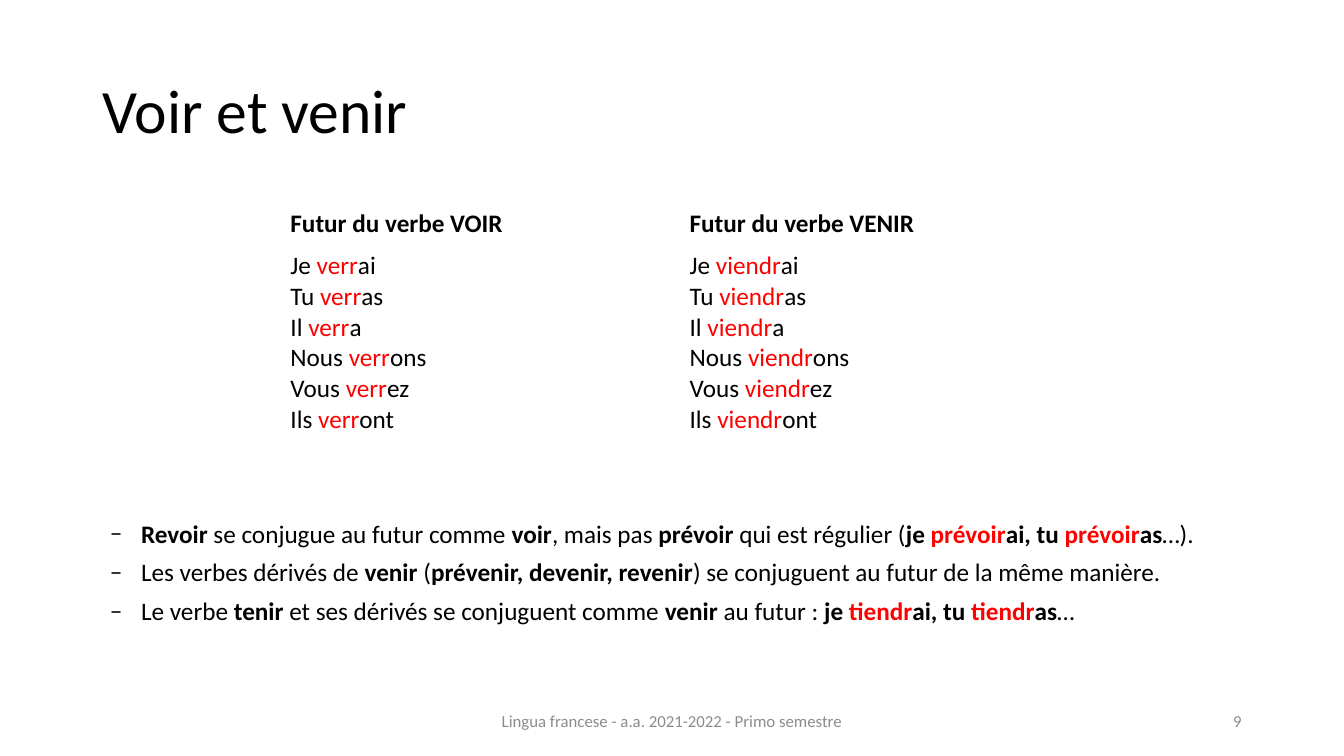
"""Build the slide on the French future tense of voir and venir."""
from dataclasses import dataclass

from lxml.etree import SubElement
from pptx import Presentation
from pptx.dml.color import RGBColor
from pptx.enum.text import MSO_ANCHOR, PP_ALIGN
from pptx.oxml.ns import qn
from pptx.util import Emu, Inches, Pt

WIDTH, HEIGHT = Inches(13.33), Inches(7.5)


@dataclass(frozen=True)
class Theme:
    font: str = "Calibri"
    ink: RGBColor = RGBColor(0, 0, 0)
    stem: RGBColor = RGBColor(255, 0, 0)
    muted: RGBColor = RGBColor(0x8C, 0x8C, 0x8C)
    paper: RGBColor = RGBColor(255, 255, 255)
    title: int = 44
    body: int = 18
    footer: int = 12


@dataclass(frozen=True)
class Box:
    """Place given as percentages of the slide's size."""
    left: float
    top: float
    width: float
    height: float

    def emu(self) -> tuple[Emu, ...]:
        return (Emu(round(WIDTH * self.left / 100)), Emu(round(HEIGHT * self.top / 100)),
                Emu(round(WIDTH * self.width / 100)), Emu(round(HEIGHT * self.height / 100)))


@dataclass(frozen=True)
class Label:
    text: str
    box: Box
    size: int
    color: RGBColor
    align: PP_ALIGN = PP_ALIGN.LEFT
    spacing: float = 1.0


@dataclass(frozen=True)
class Verb:
    name: str
    stem: str


THEME = Theme()
LABELS = (
    Label("Voir et venir", Box(6.88, 5.33, 86.25, 19.33), THEME.title, THEME.ink, spacing=0.9),
    Label("Lingua francese - a.a. 2021-2022 - Primo semestre",
          Box(33.13, 92.67, 33.75, 5.33), THEME.footer, THEME.muted, PP_ALIGN.CENTER),
    Label("9", Box(70.63, 92.67, 22.5, 5.33), THEME.footer, THEME.muted, PP_ALIGN.RIGHT),
)
TABLE_BOX = Box(20.86, 26.93, 59.41, 30.8)
HEADER_SHARE = 0.18
NOTES_BOX = Box(7.43, 67.87, 86.25, 15.73)
VERBS = (Verb("VOIR", "verr"), Verb("VENIR", "viendr"))
ENDINGS = {"Je": "ai", "Tu": "as", "Il": "a", "Nous": "ons", "Vous": "ez", "Ils": "ont"}
NOTES = (
    "*Revoir* se conjugue au futur comme *voir*, mais pas *prévoir* qui est régulier "
    "(*je |prévoir|ai, tu |prévoir|as*…).",
    "Les verbes dérivés de *venir* (*prévenir, devenir, revenir*) "
    "se conjuguent au futur de la même manière.",
    "Le verbe *tenir* et ses dérivés se conjuguent comme *venir *au futur : "
    "*je |tiendr|ai, tu |tiendr|as*…",
)


def write(tf, text: str, *, size: int = THEME.body, color: RGBColor = THEME.ink,
          align: PP_ALIGN = PP_ALIGN.LEFT, spacing: float = 1.0, after: int = 0,
          bullet: str = "") -> None:
    """Write one paragraph per line; asterisks mark bold and bars mark a verb stem."""
    for n, line in enumerate(text.split("\n")):
        p = tf.add_paragraph() if n else tf.paragraphs[0]
        p.alignment, p.line_spacing, p.space_after = align, spacing, Pt(after)
        if bullet:
            pPr = p._p.get_or_add_pPr()
            pPr.set("marL", str(Inches(0.31)))
            pPr.set("indent", str(-Inches(0.31)))
            SubElement(pPr, qn("a:buFont"), typeface=THEME.font)
            SubElement(pPr, qn("a:buChar"), char=bullet)
        for i, phrase in enumerate(line.split("*")):
            for j, part in enumerate(phrase.split("|")):
                if part:
                    r = p.add_run()
                    r.text = part
                    r.font.name, r.font.size = THEME.font, Pt(size)
                    r.font.bold = i % 2 == 1
                    r.font.color.rgb = THEME.stem if j % 2 else color


def add_text(s, box: Box, text: str, anchor: MSO_ANCHOR, **fmt) -> None:
    """Add a wrapping text box."""
    tf = s.shapes.add_textbox(*box.emu()).text_frame
    tf.word_wrap, tf.vertical_anchor = True, anchor
    write(tf, text, **fmt)


def add_conjugations(s, box: Box, verbs: tuple[Verb, ...]) -> None:
    """Add the table with one column for each verb."""
    table = s.shapes.add_table(2, len(verbs), *box.emu()).table
    height = box.emu()[3]
    table.rows[0].height = Emu(round(height * HEADER_SHARE))
    table.rows[1].height = height - table.rows[0].height
    for col, verb in enumerate(verbs):
        forms = "\n".join(f"{who} |{verb.stem}|{end}" for who, end in ENDINGS.items())
        for row, text in enumerate((f"*Futur du verbe {verb.name}*", forms)):
            cell = table.cell(row, col)
            cell.fill.solid()
            cell.fill.fore_color.rgb = THEME.paper
            write(cell.text_frame, text)


def main() -> None:
    """Build and save the slide."""
    prs = Presentation()
    prs.slide_width, prs.slide_height = WIDTH, HEIGHT
    s = prs.slides.add_slide(prs.slide_layouts[6])
    for label in LABELS:
        add_text(s, label.box, label.text, MSO_ANCHOR.MIDDLE, size=label.size,
                 color=label.color, align=label.align, spacing=label.spacing)
    add_conjugations(s, TABLE_BOX, VERBS)
    add_text(s, NOTES_BOX, "\n".join(NOTES), MSO_ANCHOR.TOP, after=6, bullet="–")
    prs.save("out.pptx")


if __name__ == "__main__":
    main()
